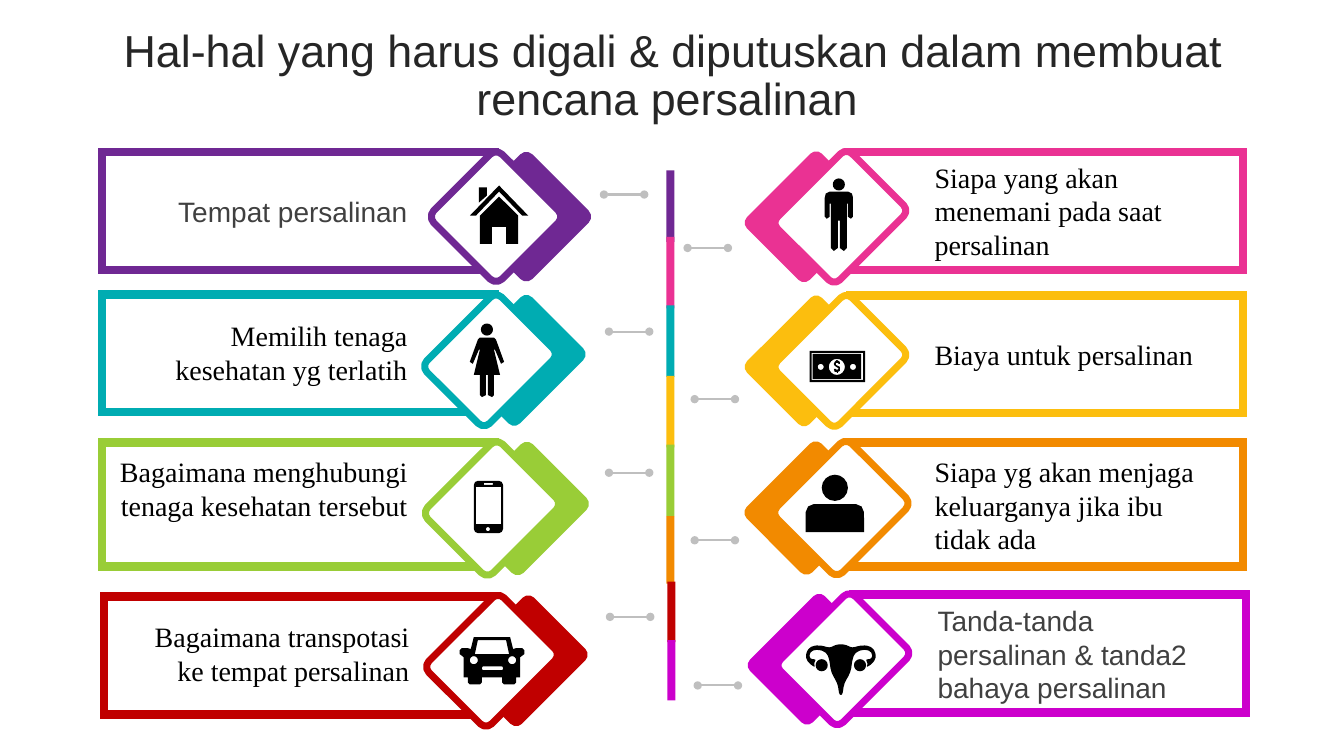
from dataclasses import dataclass
from math import cos, dist, pi, sin

from lxml.etree import SubElement
from pptx import Presentation
from pptx.dml.color import RGBColor
from pptx.enum.shapes import MSO_CONNECTOR, MSO_SHAPE as Shape
from pptx.enum.text import MSO_ANCHOR, MSO_AUTO_SIZE, PP_ALIGN as Align
from pptx.oxml.ns import qn
from pptx.util import Inches, Pt

Point = tuple[float, float]
Outline = list[Point]


@dataclass
class Card:
    text: str
    color: str
    panel: tuple[float, float, float]  # left, top, height
    tile: tuple[float, float, float, float]  # left, top, width, height
    text_top: float
    text_height: float
    link: Point
    bar: tuple[float, float, float]  # left, top, height
    font: str = "Times New Roman"
    text_color: str = "000000"

    @property
    def on_left(self) -> bool:
        return self.panel[0] < 6


ARIAL = ("Arial", "404040")
PANEL_WIDTH, TEXT_WIDTH, LINK_WIDTH, TILE_SHIFT = 3.9, 3.05, 0.4, 0.3

CARDS = [
    Card("Tempat persalinan", "6F2893", (1.01, 1.51, 1.17), (4.74, 1.67, 0.96, 0.96),
         1.88, 0.44, (5.99, 1.93), (6.61, 1.69, 0.71), *ARIAL),
    Card("Siapa yang akan menemani pada saat persalinan", "EA3293", (8.43, 1.51, 1.17),
         (7.51, 1.71, 1.05, 0.88), 1.54, 1.11, (6.82, 2.46), (6.61, 2.35, 0.71)),
    Card("Memilih tenaga kesehatan yg terlatih", "00ACB2", (1.01, 2.92, 1.17),
         (4.72, 3.05, 0.88, 1.05), 3.11, 0.77, (6.04, 3.29), (6.61, 3.03, 0.71)),
    Card("Biaya untuk persalinan", "FCBE0E", (8.43, 2.93, 1.17),
         (7.51, 3.14, 1.05, 0.88), 3.3, 0.44, (6.89, 3.96), (6.61, 3.73, 0.71)),
    Card("Bagaimana menghubungi tenaga kesehatan tersebut", "99CD37", (1.01, 4.39, 1.23),
         (4.72, 4.52, 0.92, 1.05), 4.46, 1.11, (6.04, 4.69), (6.61, 4.41, 0.71)),
    Card("Siapa yg akan menjaga keluarganya jika ibu tidak ada", "F28A00", (8.43, 4.39, 1.23),
         (7.52, 4.58, 1.05, 0.92), 4.46, 1.11, (6.89, 5.36), (6.61, 5.12, 0.67)),
    Card("Bagaimana transpotasi ke tempat persalinan", "C00000", (1.03, 5.92, 1.17),
         (4.74, 6.03, 0.88, 1.05), 6.1, 0.77, (6.05, 6.12), (6.62, 5.77, 0.6)),
    Card("Tanda-tanda persalinan & tanda2 bahaya persalinan", "CC00CC", (8.46, 5.9, 1.17),
         (7.54, 6.1, 1.05, 0.88), 5.94, 1.11, (6.92, 6.8), (6.62, 6.35, 0.6), *ARIAL),
]


def circle(x: float, y: float, radius: float) -> Outline:
    angles = [2 * pi * step / 16 for step in range(16)]
    return [(x + radius * cos(a), y + radius * sin(a)) for a in angles]


def rounded(corners: Outline, radius: float) -> Outline:
    """Replace each corner by a curve that starts at most halfway along its edges."""
    curve = []
    for i, corner in enumerate(corners):
        ends = []
        for other in (corners[i - 1], corners[(i + 1) % len(corners)]):
            part = min(radius / dist(corner, other), 0.5)
            ends.append([c + (o - c) * part for c, o in zip(corner, other)])
        for t in (0.1, 0.5, 0.9):
            curve.append(tuple(a * (1 - t) ** 2 + 2 * c * t * (1 - t) + b * t * t
                               for a, c, b in zip(ends[0], corner, ends[1])))
    return curve


def box(left: float, top: float, right: float, bottom: float) -> Outline:
    return [(left, top), (right, top), (right, bottom), (left, bottom)]


def mirrored(half: Outline) -> Outline:
    """Complete a left half whose first point lies on the axis."""
    axis = half[0][0]
    return half + [(2 * axis - x, y) for x, y in reversed(half) if x != axis]


HOUSE = [
    [(4.95, 1.95), (5.14, 2.14), (5.14, 2.42), (5.02, 2.42), (5.02, 2.25),
     (4.88, 2.25), (4.88, 2.42), (4.76, 2.42), (4.76, 2.14)],
    [(4.75, 1.86), (4.83, 1.86), (4.83, 1.94), (4.75, 2.01)],
    [(4.95, 1.84), (5.24, 2.14), (5.18, 2.14), (4.95, 1.9), (4.72, 2.14), (4.66, 2.14)],
]
WOMAN = [
    circle(4.83, 3.27, 0.06),
    mirrored([(4.83, 3.35), (4.76, 3.35), (4.74, 3.37), (4.66, 3.59), (4.69, 3.61),
              (4.75, 3.47), (4.76, 3.47), (4.7, 3.72), (4.76, 3.72), (4.76, 3.92),
              (4.78, 3.94), (4.82, 3.92), (4.82, 3.72), (4.83, 3.72)]),
]
PHONE = [
    rounded(box(4.7, 4.77, 4.99, 5.29), 0.05), box(4.72, 4.83, 4.97, 5.2),
    box(4.8, 4.79, 4.89, 4.81), circle(4.84, 5.25, 0.02),
]
CAR = [
    mirrored([(4.88, 6.32), (4.7, 6.32), (4.67, 6.44), (4.64, 6.43), (4.58, 6.43),
              (4.56, 6.45), (4.56, 6.49), (4.6, 6.52), (4.6, 6.72), (4.64, 6.72),
              (4.64, 6.77), (4.66, 6.79), (4.76, 6.79), (4.78, 6.77), (4.78, 6.72),
              (4.88, 6.72)]),
    mirrored([(4.88, 6.35), (4.74, 6.35), (4.71, 6.49), (4.88, 6.49)]),
    circle(4.7, 6.55, 0.04), circle(5.08, 6.55, 0.04),
    rounded(box(4.78, 6.61, 4.99, 6.65), 0.02),
]
MAN = [
    circle(8.32, 1.83, 0.06),
    mirrored([(8.32, 1.9), (8.23, 1.9), (8.19, 1.92), (8.18, 1.96), (8.18, 2.15),
              (8.2, 2.17), (8.23, 2.15), (8.23, 2.02), (8.24, 2.02), (8.24, 2.46),
              (8.27, 2.49), (8.31, 2.46), (8.31, 2.19), (8.32, 2.19)]),
]
DOLLAR = [(8.33, 3.61), (8.32, 3.61), (8.31, 3.6), (8.29, 3.6), (8.29, 3.62), (8.33, 3.64),
          (8.33, 3.68), (8.31, 3.69), (8.31, 3.7), (8.3, 3.7), (8.3, 3.69), (8.28, 3.69),
          (8.27, 3.66), (8.29, 3.66), (8.3, 3.67), (8.32, 3.66), (8.31, 3.65),
          (8.28, 3.63), (8.27, 3.61), (8.28, 3.59), (8.3, 3.57), (8.33, 3.59)]
BANKNOTE = [
    box(8.03, 3.48, 8.58, 3.79), box(8.05, 3.5, 8.56, 3.77), box(8.06, 3.51, 8.54, 3.76),
    circle(8.14, 3.64, 0.03), circle(8.46, 3.64, 0.03), circle(8.3, 3.64, 0.08), DOLLAR,
]
PERSON = [
    circle(8.28, 4.84, 0.13),
    rounded(box(7.99, 5, 8.57, 5.28), 0.1)[:6] + [(8.57, 5.28), (7.99, 5.28)],
]
UTERUS = [
    circle(8.15, 6.6, 0.06), circle(8.53, 6.6, 0.06),
    rounded(mirrored([(8.34, 6.39), (8.28, 6.4), (8.23, 6.43), (8.14, 6.4), (8.04, 6.41),
                      (7.99, 6.48), (8, 6.56), (8.09, 6.63), (8.07, 6.58), (8.1, 6.54),
                      (8.03, 6.54), (8.03, 6.47), (8.1, 6.44), (8.2, 6.47), (8.23, 6.56),
                      (8.24, 6.67), (8.31, 6.78), (8.32, 6.88), (8.34, 6.9)]), 1),
]


def rgb(color: str) -> RGBColor:
    return RGBColor.from_string(color)


def paint(shape, fill: str, line: str = "", width: float = 0) -> None:
    shape.shadow.inherit = False
    shape.fill.solid()
    shape.fill.fore_color.rgb = rgb(fill)
    if line:
        shape.line.color.rgb = rgb(line)
        shape.line.width = Pt(width)
    else:
        shape.line.fill.background()


def add_text(shapes, text: str, place: tuple, size: int, font: str, color: str, align: Align):
    frame = shapes.add_textbox(*map(Inches, place)).text_frame
    frame.word_wrap = True
    frame.text = text
    paragraph = frame.paragraphs[0]
    paragraph.alignment = align
    face = paragraph.runs[0].font
    face.name, face.size, face.color.rgb = font, Pt(size), rgb(color)
    return frame


def add_link(shapes, x: float, y: float) -> None:
    link = shapes.add_connector(MSO_CONNECTOR.STRAIGHT, Inches(x), Inches(y),
                                Inches(x + LINK_WIDTH), Inches(y))
    link.line.color.rgb = rgb("BFBFBF")
    link.line.width = Pt(1.5)
    properties = link._element.spPr
    for end in ("a:headEnd", "a:tailEnd"):
        SubElement(properties.find(qn("a:ln")), qn(end), type="oval")
    SubElement(properties, qn("a:effectLst"))


def add_card(shapes, card: Card) -> None:
    left, top, height = card.panel
    panel = shapes.add_shape(Shape.RECTANGLE, *map(Inches, (left, top, PANEL_WIDTH, height)))
    paint(panel, "FFFFFF", card.color, 6)
    SubElement(panel._element.spPr.find(qn("a:ln")), qn("a:miter"), lim="800000")

    x, *rest = card.tile
    front_x = x - TILE_SHIFT if card.on_left else x + TILE_SHIFT
    for tile_x, style in ((x, (card.color,)), (front_x, ("FFFFFF", card.color, 5))):
        tile = shapes.add_shape(Shape.ROUNDED_RECTANGLE, *map(Inches, (tile_x, *rest)))
        tile.adjustments[0] = 0.09
        tile.rotation = 45 if card.on_left else 315
        paint(tile, *style)

    add_link(shapes, *card.link)
    text_left = left + (0.08 if card.on_left else 0.74)
    frame = add_text(shapes, card.text, (text_left, card.text_top, TEXT_WIDTH, card.text_height),
                     20, card.font, card.text_color, Align.RIGHT if card.on_left else Align.LEFT)
    frame.auto_size = MSO_AUTO_SIZE.SHAPE_TO_FIT_TEXT


def add_icon(shapes, outlines: list[Outline]) -> None:
    contours = [[(Inches(x), Inches(y)) for x, y in outline] for outline in outlines]
    builder = shapes.build_freeform(*contours[0][0])
    for index, contour in enumerate(contours):
        if index:
            builder.move_to(*contour[0])
        builder.add_line_segments(contour[1:], close=True)
    paint(builder.convert_to_shape(), "000000")


def main() -> None:
    deck = Presentation()
    deck.slide_width, deck.slide_height = Inches(13.33), Inches(7.5)
    shapes = deck.slides.add_slide(deck.slide_layouts[6]).shapes
    title = add_text(shapes, "Hal-hal yang harus digali & diputuskan dalam membuat rencana persalinan ",
                     (0.35, 0.37, 12.66, 0.79), 32, "Arial", "262626", Align.CENTER)
    title.vertical_anchor = MSO_ANCHOR.MIDDLE
    title.paragraphs[0].line_spacing = 0.9
    title.paragraphs[0].space_before = Pt(10)
    for card in CARDS:
        add_card(shapes, card)
    spine = shapes.add_group_shape().shapes
    for card in CARDS:
        left, top, height = card.bar
        bar = spine.add_shape(Shape.RECTANGLE, *map(Inches, (left, top, 0.08, height)))
        paint(bar, card.color)
    for icon in (HOUSE, WOMAN, CAR, MAN, BANKNOTE, PERSON, UTERUS, PHONE):
        add_icon(shapes, icon)
    deck.save("out.pptx")


if __name__ == "__main__":
    main()
